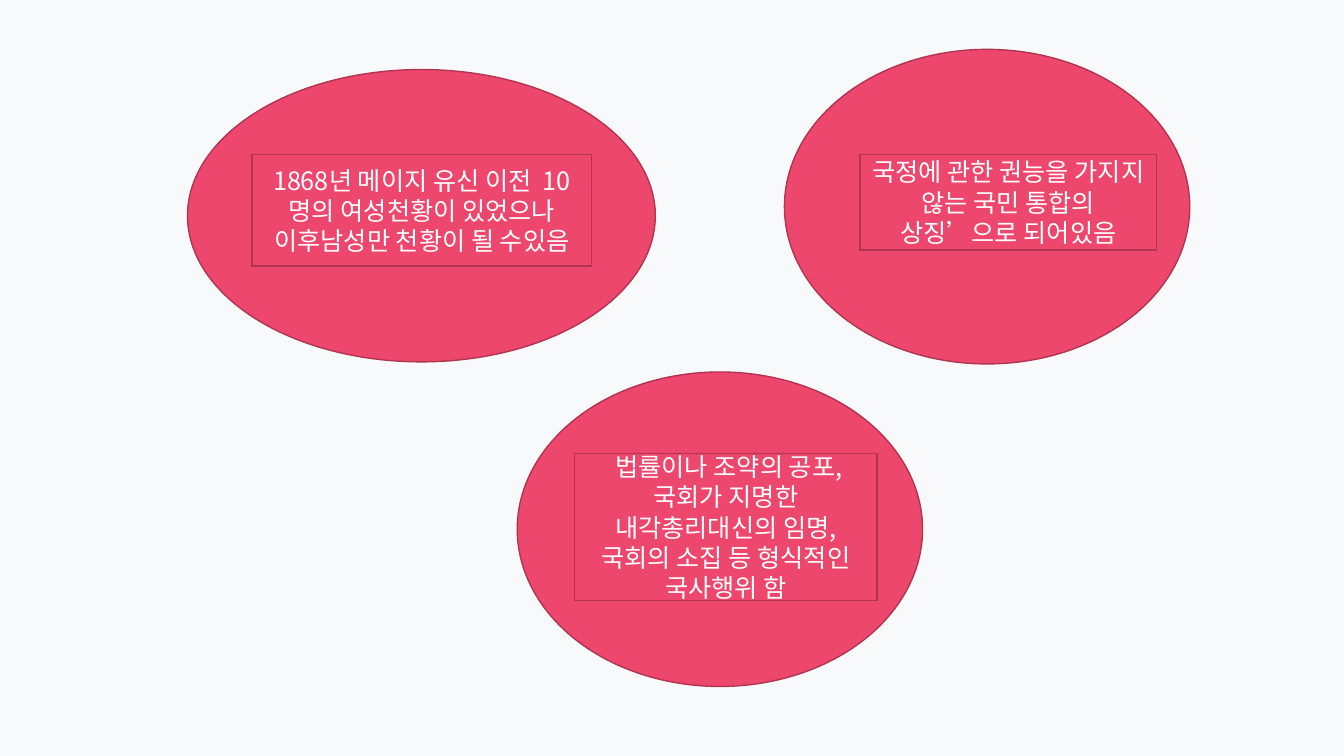
import pptx
import pptx.dml.color
import pptx.enum.shapes
import pptx.enum.text
import pptx.oxml.ns
import pptx.util
from lxml import etree

# Content: each bubble is an ellipse, a text panel and its (text, font) runs
KOREAN = "Noto Sans CJK KR"
JAPANESE = "Noto Sans CJK JP"
BUBBLES = [
    {
        "ellipse": (1.86, 0.69, 4.64, 2.9),
        "panel": (2.5, 1.53, 3.37, 1.11),
        "runs": [
            ("1868", KOREAN),
            ("년 메이지 유신 이전  ", JAPANESE),
            ("10", KOREAN),
            ("명의 여성천황이 있었으나 이후남성만 천황이 될 수있음", JAPANESE),
        ],
    },
    {
        "ellipse": (7.78, 0.49, 4.02, 3.12),
        "panel": (8.53, 1.53, 2.94, 0.95),
        "runs": [("국정에 관한 권능을 가지지 않는 국민 통합의 상징’으로 되어있음", JAPANESE)],
    },
    {
        "ellipse": (5.13, 3.69, 4.02, 3.12),
        "panel": (5.7, 4.5, 3, 1.46),
        "runs": [(" 법률이나 조약의 공포, 국회가 지명한 내각총리대신의 임명, "
                  "국회의 소집 등 형식적인 국사행위 함", JAPANESE)],
    },
]
COLORS = {"background": "F8F9FB", "fill": "EE476E", "line": "B03551", "text": "FFFFFF"}
FRAME_FORMAT = {
    "word_wrap": True,
    "vertical_anchor": pptx.enum.text.MSO_ANCHOR.MIDDLE,
}


def color(name):
    return pptx.dml.color.RGBColor.from_string(COLORS[name])


def set_format(target, values):
    for name, value in values.items():
        setattr(target, name, value)


def add_outline(slide, kind, box):
    shape = slide.shapes.add_shape(kind, *map(pptx.util.Inches, box))
    shape.shadow.inherit = False
    shape.fill.solid()
    shape.fill.fore_color.rgb = color("fill")
    shape.line.color.rgb = color("line")
    shape.line.width = pptx.util.Pt(1)
    return shape


def add_text(shape, runs):
    set_format(shape.text_frame, FRAME_FORMAT)
    paragraph = shape.text_frame.paragraphs[0]
    paragraph.alignment = pptx.enum.text.PP_ALIGN.CENTER
    for text, font_name in runs:
        run = paragraph.add_run()
        run.text = text
        set_format(run.font, {"size": pptx.util.Pt(18), "name": font_name})
        run.font.color.rgb = color("text")
        # East Asian typeface
        properties = run.font._element
        etree.SubElement(properties, pptx.oxml.ns.qn("a:ea"), typeface=font_name)


def main():
    presentation = pptx.Presentation()
    presentation.slide_width = pptx.util.Inches(13.33)
    presentation.slide_height = pptx.util.Inches(7.5)
    slide = presentation.slides.add_slide(presentation.slide_layouts[6])

    # Background
    slide.background.fill.solid()
    slide.background.fill.fore_color.rgb = color("background")

    # Bubbles
    shapes = pptx.enum.shapes.MSO_SHAPE
    for bubble in BUBBLES:
        add_outline(slide, shapes.OVAL, bubble["ellipse"])
        panel = add_outline(slide, shapes.RECTANGLE, bubble["panel"])
        add_text(panel, bubble["runs"])

    presentation.save("out.pptx")


if __name__ == "__main__":
    main()
